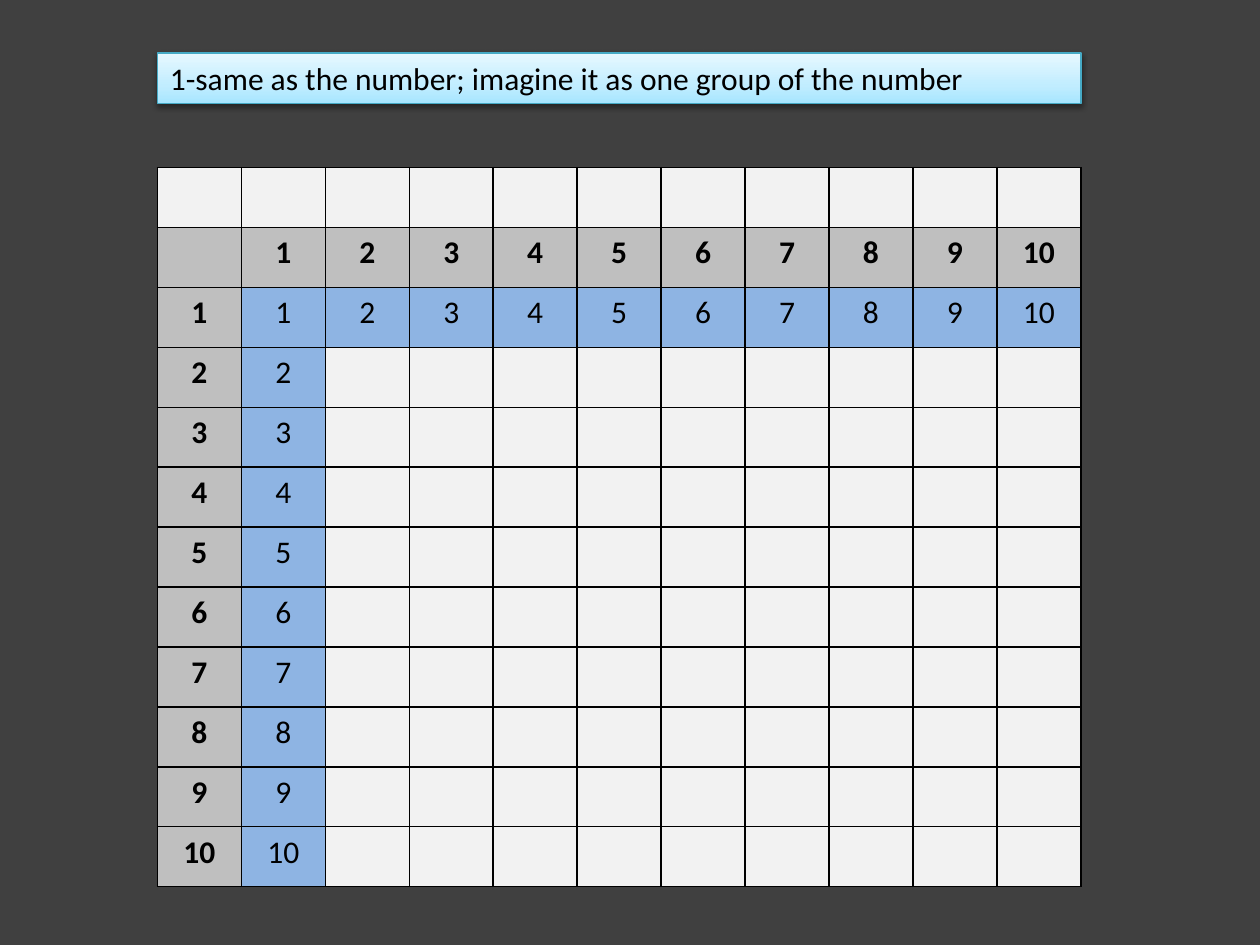
"""Build a slide with a times table that shows the ones facts."""
import copy
import dataclasses
import pptx
import pptx.dml.color
import pptx.enum.shapes
import pptx.enum.text
import pptx.oxml
import pptx.oxml.ns
import pptx.util

Inches = pptx.util.Inches
Pt = pptx.util.Pt
qn = pptx.oxml.ns.qn
NS = pptx.oxml.ns.nsdecls("a")


@dataclasses.dataclass(frozen=True)
class Theme:
    font: str = "Calibri"
    size: int = 18
    back: str = "404040"
    ink: str = "000000"
    plain: str = "F2F2F2"
    head: str = "BFBFBF"
    fact: str = "8EB4E3"
    edge: str = "46AAC5"
    glow: tuple = ((0, "A7E6FF"), (0.35, "C1EDFF"), (1, "E7F8FF"))


def tint(code):
    return pptx.dml.color.RGBColor.from_string(code)


class Board:
    def __init__(self, theme, slide):
        self.theme = theme
        self.slide = slide
        back = slide.background.fill
        back.solid()
        back.fore_color.rgb = tint(theme.back)

    def label(self, frame, text, align, bold=False):
        frame.text = text
        for para in frame.paragraphs:
            para.alignment = align
            for run in para.runs:
                run.font.name = self.theme.font
                run.font.size = Pt(self.theme.size)
                run.font.bold = bold
                run.font.color.rgb = tint(self.theme.ink)

    def banner(self, text, left, top, width, height):
        box = self.slide.shapes.add_shape(
            pptx.enum.shapes.MSO_SHAPE.RECTANGLE,
            Inches(left), Inches(top), Inches(width), Inches(height))
        box.fill.gradient()
        box.fill.gradient_angle = 90
        props = box._element.spPr
        stops = props.find(".//" + qn("a:gsLst"))
        stops.append(copy.deepcopy(stops[-1]))
        for stop, (place, code) in zip(box.fill.gradient_stops, self.theme.glow):
            stop.position = place
            stop.color.rgb = tint(code)
        box.line.color.rgb = tint(self.theme.edge)
        box.line.width = Pt(0.75)
        props.append(pptx.oxml.parse_xml(
            f'<a:effectLst {NS}><a:outerShdw blurRad="40000" dist="20000" '
            f'dir="5400000" rotWithShape="0"><a:srgbClr val="{self.theme.ink}">'
            '<a:alpha val="38000"/></a:srgbClr></a:outerShdw></a:effectLst>'))
        frame = box.text_frame
        frame.word_wrap = True
        frame.auto_size = pptx.enum.text.MSO_AUTO_SIZE.SHAPE_TO_FIT_TEXT
        self.label(frame, text, pptx.enum.text.PP_ALIGN.LEFT)

    def border(self, cell):
        props = cell._tc.get_or_add_tcPr()
        for spot, side in enumerate(("lnL", "lnR", "lnT", "lnB")):
            props.insert(spot, pptx.oxml.parse_xml(
                f'<a:{side} {NS} w="12700"><a:solidFill>'
                f'<a:srgbClr val="{self.theme.ink}"/></a:solidFill></a:{side}>'))

    def grid(self, rows, left, top, width, height):
        table = self.slide.shapes.add_table(
            len(rows), len(rows[0]),
            Inches(left), Inches(top), Inches(width), Inches(height)).table
        table.first_row = False
        table.horz_banding = False
        for r, row in enumerate(rows):
            for c, (text, code) in enumerate(row):
                cell = table.cell(r, c)
                cell.fill.solid()
                cell.fill.fore_color.rgb = tint(code)
                self.border(cell)
                self.label(cell.text_frame, text, pptx.enum.text.PP_ALIGN.CENTER,
                           code == self.theme.head)


def facts(theme, top=10):
    def entry(a, b):
        if a * b == 0:
            return str(a + b or ""), theme.head
        if 1 in (a, b):
            return str(a * b), theme.fact
        return "", theme.plain

    span = range(top + 1)
    blank = [("", theme.plain) for _ in span]
    return [blank] + [[entry(a, b) for b in span] for a in span]


def main():
    deck = pptx.Presentation()
    deck.slide_width = Inches(10)
    deck.slide_height = Inches(7.5)
    theme = Theme()
    board = Board(theme, deck.slides.add_slide(deck.slide_layouts[6]))
    left, width = 1.25, 7.33
    board.grid(facts(theme), left, 1.33, width, 5.71)
    board.banner("1-same as the number; imagine it as one group of the number",
                 left, 0.42, width, 0.4)
    deck.save("out.pptx")


if __name__ == "__main__":
    main()
